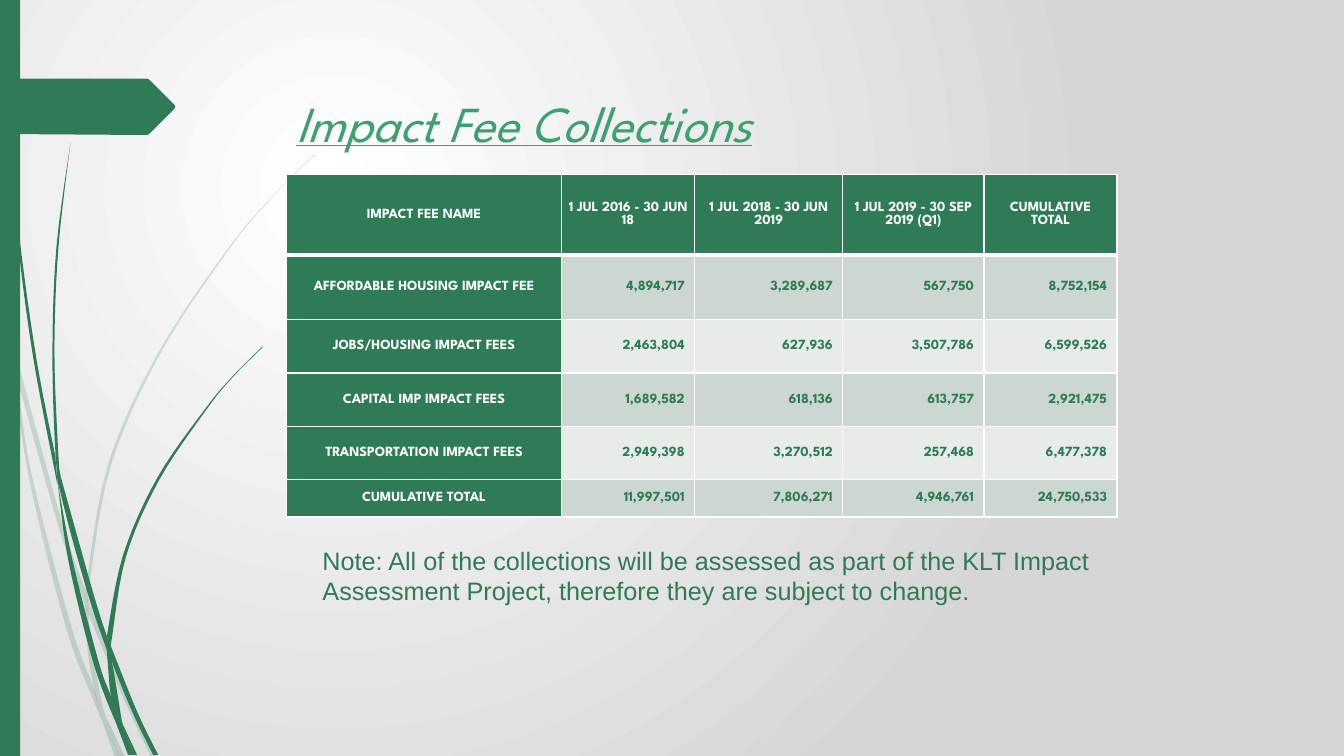
from lxml import etree
from pptx import Presentation
from pptx.dml.color import RGBColor
from pptx.enum.shapes import MSO_SHAPE
from pptx.enum.text import MSO_ANCHOR as Anchor, PP_ALIGN as Align
from pptx.oxml.ns import qn
from pptx.util import Inches, Pt

GREEN, MINT, WHITE = "2E7B56", "3CA070", "FDFDFD"
BANDS = ["CDD7D1", "E8ECE9"]
HEAD_FONT, NOTE_FONT = "League Spartan", "Arial"

TITLE = "Impact Fee Collections"
NOTE = ("Note: All of the collections will be assessed as part of the KLT Impact "
        "Assessment Project, therefore they are subject to change.")
HEADS = ["IMPACT FEE NAME", "1 JUL 2016 - 30 JUN 18", "1 JUL 2018 - 30 JUN 2019",
         "1 JUL 2019 - 30 SEP 2019 (Q1)", "CUMULATIVE TOTAL"]
FEES = [
    ("AFFORDABLE HOUSING IMPACT FEE", 4894717, 3289687, 567750, 8752154),
    ("JOBS/HOUSING IMPACT FEES", 2463804, 627936, 3507786, 6599526),
    ("CAPITAL IMP IMPACT FEES", 1689582, 618136, 613757, 2921475),
    ("TRANSPORTATION IMPACT FEES", 2949398, 3270512, 257468, 6477378),
    ("CUMULATIVE TOTAL", 11997501, 7806271, 4946761, 24750533),
]
COLS = [2.73, 1.32, 1.47, 1.4, 1.32]
ROWS = [0.8, 0.64, 0.53, 0.53, 0.53, 0.37]

# Each blade of grass is a ring of smooth edges that meet at corners.
PALE = [
    [[(0.11, 3.5), (0.09, 3.22), (0, 2.82)], [(0, 2.99), (0.1, 3.44), (0.11, 3.5)]],
    [[(0.14, 3.45), (0.62, 5.2), (0.85, 5.86)],
     [(0.84, 5.99), (0.58, 5.22), (0.17, 3.76)]],
    [[(0.88, 5.96), (0.92, 6.07), (1.27, 6.92), (1.55, 7.51)],
     [(1.5, 7.51), (1.23, 6.94), (0.88, 6.1)]],
    [[(1.19, 7.51), (1.24, 7.51)], [(1.05, 7.11), (1.19, 7.51)]],
    [[(0.11, 3.5), (0.28, 4.7), (0.65, 6.21), (0.92, 6.93), (1.01, 7.14)],
     [(0.99, 7.07), (0.93, 6.83), (0.7, 6.19), (0.31, 4.69), (0.17, 3.76), (0.11, 3.5)]],
    [[(0.84, 5.99), (0.87, 6.46), (0.93, 6.83), (0.96, 6.92), (1.05, 7.11)],
     [(1.03, 7.06), (0.91, 6.46), (0.88, 6.1), (0.84, 5.99)]],
    [[(0.88, 5.96), (0.88, 5.84), (1.1, 4.62), (1.6, 3.49), (2.29, 2.45),
      (2.68, 1.98), (2.9, 1.75), (3.12, 1.54)],
     [(3.12, 1.53), (2.89, 1.75), (2.68, 1.97), (2.28, 2.44), (1.58, 3.48),
      (1.07, 4.61), (0.85, 5.84), (0.85, 5.86)]],
    [[(1.01, 7.14), (1.14, 7.51)], [(1.19, 7.51), (1.01, 7.14)]],
    [[(0.88, 6.1), (0.88, 5.96)], [(0.85, 5.86), (0.84, 5.99)]],
    [[(0.93, 6.83), (0.99, 7.07), (1.01, 7.14), (1.19, 7.51)],
     [(1.19, 7.51), (1.05, 7.11), (0.96, 6.92), (0.93, 6.83)]],
]
DARK = [
    [[(0.03, 0), (0.04, 0.48), (0.07, 1.1), (0.17, 2.33), (0.33, 3.55), (0.57, 4.81)],
     [(0.55, 4.53), (0.36, 3.55), (0.19, 2.32), (0.08, 1.09), (0.05, 0.48), (0.04, 0)]],
    [[(0.6, 4.72), (0.64, 5.05), (0.88, 5.92), (1.06, 6.45)],
     [(1.06, 6.31), (0.93, 5.9), (0.6, 4.72)]],
    [[(1.1, 6.41), (1.11, 6.56), (1.32, 7.08), (1.52, 7.49)],
     [(1.57, 7.49), (1.36, 7.06), (1.1, 6.41)]],
    [[(0.57, 4.77), (0.68, 5.57), (0.93, 6.59), (1.17, 7.22)],
     [(1.16, 7.17), (1.1, 6.91), (0.98, 6.57), (0.72, 5.56), (0.57, 4.77)]],
    [[(0.6, 4.72), (0.58, 4.53), (0.54, 3.49), (0.58, 2.45), (0.7, 1.41)],
     [(0.7, 1.41), (0.56, 2.45), (0.52, 3.49), (0.55, 4.49), (0.6, 4.72)]],
    [[(1.33, 7.49), (1.36, 7.49)], [(1.22, 7.19), (1.33, 7.49)]],
    [[(0.57, 4.77), (0.64, 5.05)], [(0.6, 4.72), (0.55, 4.49)]],
    [[(1.1, 6.41), (1.11, 6.33), (1.25, 5.52), (1.58, 4.76), (2.05, 4.06),
      (2.31, 3.74), (2.61, 3.44)],
     [(2.6, 3.44), (2.31, 3.73), (2.04, 4.05), (1.56, 4.74), (1.22, 5.51), (1.06, 6.31)]],
    [[(1.17, 7.22), (1.27, 7.49)], [(1.31, 7.49), (1.17, 7.22)]],
    [[(1.06, 6.45), (1.1, 6.91), (1.16, 7.06), (1.22, 7.19)],
     [(1.21, 7.16), (1.11, 6.56), (1.06, 6.45)]],
    [[(1.06, 6.45), (1.11, 6.56)], [(1.1, 6.41), (1.06, 6.31)]],
    [[(1.1, 6.91), (1.17, 7.22), (1.3, 7.49)],
     [(1.33, 7.49), (1.22, 7.19), (1.16, 7.06), (1.1, 6.91)]],
]
ARROW = [[(0, 0.78), (1.46, 0.78)], [(1.48, 0.79), (1.73, 1.04)],
         [(1.74, 1.06), (1.73, 1.08)], [(1.48, 1.33), (1.46, 1.34)], [(0, 1.33), (0, 0.78)]]


def rgb(code):
    return RGBColor.from_string(code)


def smooth(edge, steps=6):
    """Return points on a Catmull-Rom curve through the edge."""
    if len(edge) == 2:
        return edge
    ends = [edge[0], *edge, edge[-1]]
    curve = [edge[0]]
    for a, b, c, d in zip(ends, ends[1:], ends[2:], ends[3:]):
        for t in (n / steps for n in range(1, steps + 1)):
            curve.append(tuple(
                q + t * (r - p) / 2 + t * t * (2 * p - 5 * q + 4 * r - s) / 2
                + t ** 3 * (3 * q - p - 3 * r + s) / 2
                for p, q, r, s in zip(a, b, c, d)))
    return curve


def paint(shape, alpha=100):
    shape.shadow.inherit = False
    shape.fill.solid()
    shape.fill.fore_color.rgb = rgb(GREEN)
    shape.line.fill.background()
    if alpha < 100:
        color = shape._element.spPr.find(".//" + qn("a:srgbClr"))
        etree.SubElement(color, qn("a:alpha"), val=str(alpha * 1000))


def draw(shapes, edges, alpha=100):
    spots = [(Inches(x), Inches(y)) for edge in edges for x, y in smooth(edge)]
    pen = shapes.build_freeform(*spots[0])
    pen.add_line_segments(spots[1:], close=True)
    paint(pen.convert_to_shape(), alpha)


def style(par, font, size, color):
    par.font.name, par.font.size = font, Pt(size)
    par.font.color.rgb = rgb(color)


def add_text(slide, text, box, font, size, color):
    frame = slide.shapes.add_textbox(*map(Inches, box)).text_frame
    frame.word_wrap = True
    frame.text = text
    style(frame.paragraphs[0], font, size, color)
    return frame


def add_edge(cell, side, width):
    line = etree.SubElement(cell._tc.get_or_add_tcPr(), qn("a:ln" + side),
                            w=str(Pt(width)))
    fill = etree.SubElement(line, qn("a:solidFill"))
    etree.SubElement(fill, qn("a:srgbClr"), val=WHITE)


def add_fees(slide):
    box = map(Inches, (2.84, 1.73, sum(COLS), sum(ROWS)))
    table = slide.shapes.add_table(len(ROWS), len(COLS), *box).table
    for col, width in zip(table.columns, COLS):
        col.width = Inches(width)
    for row, height in zip(table.rows, ROWS):
        row.height = Inches(height)
    for i, line in enumerate([HEADS, *FEES]):
        for j, value in enumerate(line):
            cell = table.cell(i, j)
            label = i == 0 or j == 0
            for side in "LRTB":
                thick = (i, side) in [(0, "B"), (1, "T")]
                add_edge(cell, side, 3 if thick else 1)
            cell.fill.solid()
            cell.fill.fore_color.rgb = rgb(GREEN if label else BANDS[(i - 1) % 2])
            cell.vertical_anchor = Anchor.MIDDLE
            cell.margin_top = cell.margin_bottom = 0
            cell.margin_left = Inches(0.07)
            cell.margin_right = Inches(0.07 if label else 0.1)
            cell.text = value if label else f"{value:,}"
            par = cell.text_frame.paragraphs[0]
            par.alignment = Align.CENTER if label else Align.RIGHT
            style(par, HEAD_FONT, 10, WHITE if label else GREEN)
            par.font.bold = True


def set_back(slide):
    """Fill the background with a glow around its upper left quarter."""
    fill = slide.background.fill
    fill.gradient()
    for stop, color in zip(fill.gradient_stops, ["FFFFFF", "D6D6D6"]):
        stop.color.rgb = rgb(color)
    grad = slide._element.find(".//" + qn("a:gradFill"))
    grad.remove(grad.find(qn("a:lin")))
    glow = etree.SubElement(grad, qn("a:path"), {"path": "circle"})
    etree.SubElement(glow, qn("a:fillToRect"), l="50000", t="50000",
                     r="100000", b="100000")


def main():
    deck = Presentation()
    deck.slide_width, deck.slide_height = Inches(13.33), Inches(7.5)
    slide = deck.slides.add_slide(deck.slide_layouts[6])
    set_back(slide)
    for blades, alpha in [(PALE, 20), (DARK, 100)]:
        group = slide.shapes.add_group_shape()
        for blade in blades:
            draw(group.shapes, blade, alpha)
    bar = map(Inches, (0, 0, 0.2, 7.5))
    paint(slide.shapes.add_shape(MSO_SHAPE.RECTANGLE, *bar))
    draw(slide.shapes, ARROW)
    title = add_text(slide, TITLE, (2.84, 0.68, 9.75, 1.4), HEAD_FONT, 36, MINT)
    title.margin_top = Inches(0.23)
    font = title.paragraphs[0].font
    font.italic = font.underline = True
    add_fees(slide)
    add_text(slide, NOTE, (3.1, 5.36, 8.12, 0.71), NOTE_FONT, 18, GREEN)
    deck.save("out.pptx")


if __name__ == "__main__":
    main()
